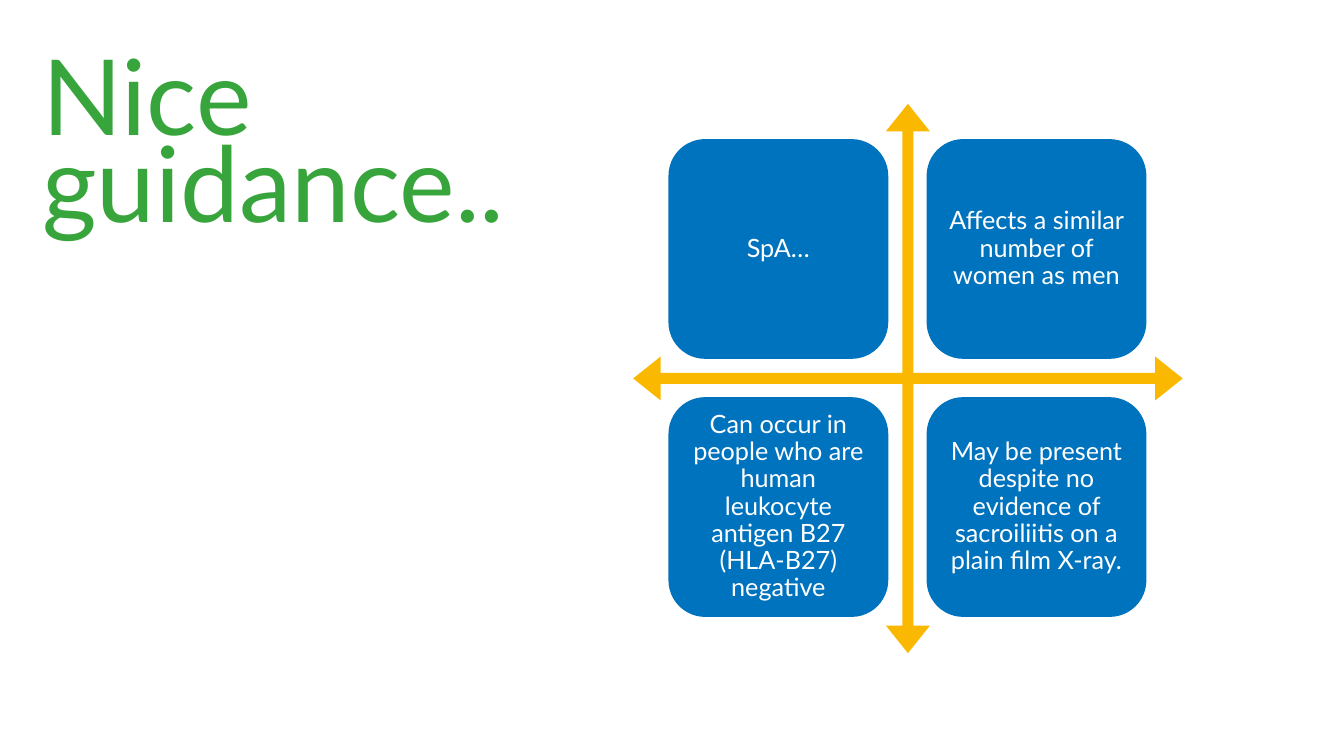
import pptx
import pptx.util
import pptx.dml.color
import pptx.enum.shapes
import pptx.enum.text

PX = 9144
SHAPE = pptx.enum.shapes.MSO_SHAPE
ALIGN = pptx.enum.text.PP_ALIGN
ANCHOR = pptx.enum.text.MSO_ANCHOR
Pt = pptx.util.Pt
THEME = {
    "font": "Lato",
    "green": "37A53C",
    "blue": "0073BE",
    "gold": "FAB900",
    "white": "FFFFFF",
    "title": 75,
    "lead": 62,
    "body": 18,
}
CARDS = [
    "SpA…",
    "Affects a similar number of women as men",
    "Can occur in people who are human leukocyte antigen B27 (HLA-B27) negative",
    "May be present despite no evidence of sacroiliitis on a plain film X-ray.",
]


def color(name):
    return pptx.dml.color.RGBColor.from_string(THEME[name])


def apply(item, form):
    for key, value in form.items():
        setattr(item, key, value)


def place(box):
    return [n * PX for n in box]


def write(shape, text, frame, para, size, ink):
    body = shape.text_frame
    body.text = text
    apply(body, frame)
    first = body.paragraphs[0]
    apply(first, para)
    apply(first.font, {"name": THEME["font"], "size": Pt(THEME[size])})
    first.font.color.rgb = color(ink)


def draw(slide, kind, box, fill):
    shape = slide.shapes.add_shape(kind, *place(box))
    shape.shadow.inherit = False
    shape.fill.solid()
    shape.fill.fore_color.rgb = color(fill)
    shape.line.fill.background()
    return shape


def heading(slide, box):
    title = slide.shapes.title
    apply(title, dict(zip(("left", "top", "width", "height"), place(box))))
    frame = {
        "word_wrap": True,
        "auto_size": pptx.enum.text.MSO_AUTO_SIZE.NONE,
        "vertical_anchor": ANCHOR.TOP,
        "margin_left": 8 * PX,
        "margin_right": 8 * PX,
        "margin_top": 5 * PX,
        "margin_bottom": 5 * PX,
    }
    para = {"alignment": ALIGN.LEFT, "line_spacing": Pt(THEME["lead"])}
    write(title, "Nice guidance..", frame, para, "title", "green")


def matrix(slide, box):
    left, top, side, _ = box
    cross = draw(slide, SHAPE.QUAD_ARROW, box, "gold")
    for spot, value in enumerate((0.02, 0.04, 0.05)):
        cross.adjustments[spot] = value
    inset, card, step = 35, 218, 256
    sides = ("left", "right", "top", "bottom")
    frame = {f"margin_{edge}": 7 * PX for edge in sides}
    frame.update(word_wrap=True, vertical_anchor=ANCHOR.MIDDLE)
    para = {"alignment": ALIGN.CENTER, "line_spacing": 0.9}
    for spot, text in enumerate(CARDS):
        row, col = divmod(spot, 2)
        spot_box = (left + inset + col * step, top + inset + row * step, card, card)
        tile = draw(slide, SHAPE.ROUNDED_RECTANGLE, spot_box, "blue")
        write(tile, text, frame, para, "body", "white")


def main():
    deck = pptx.Presentation()
    apply(deck, {"slide_width": 1333 * PX, "slide_height": 750 * PX})
    slide = deck.slides.add_slide(deck.slide_layouts[5])
    heading(slide, (34, 64, 568, 184))
    matrix(slide, (628, 103, 545, 545))
    deck.save("out.pptx")


if __name__ == "__main__":
    main()
